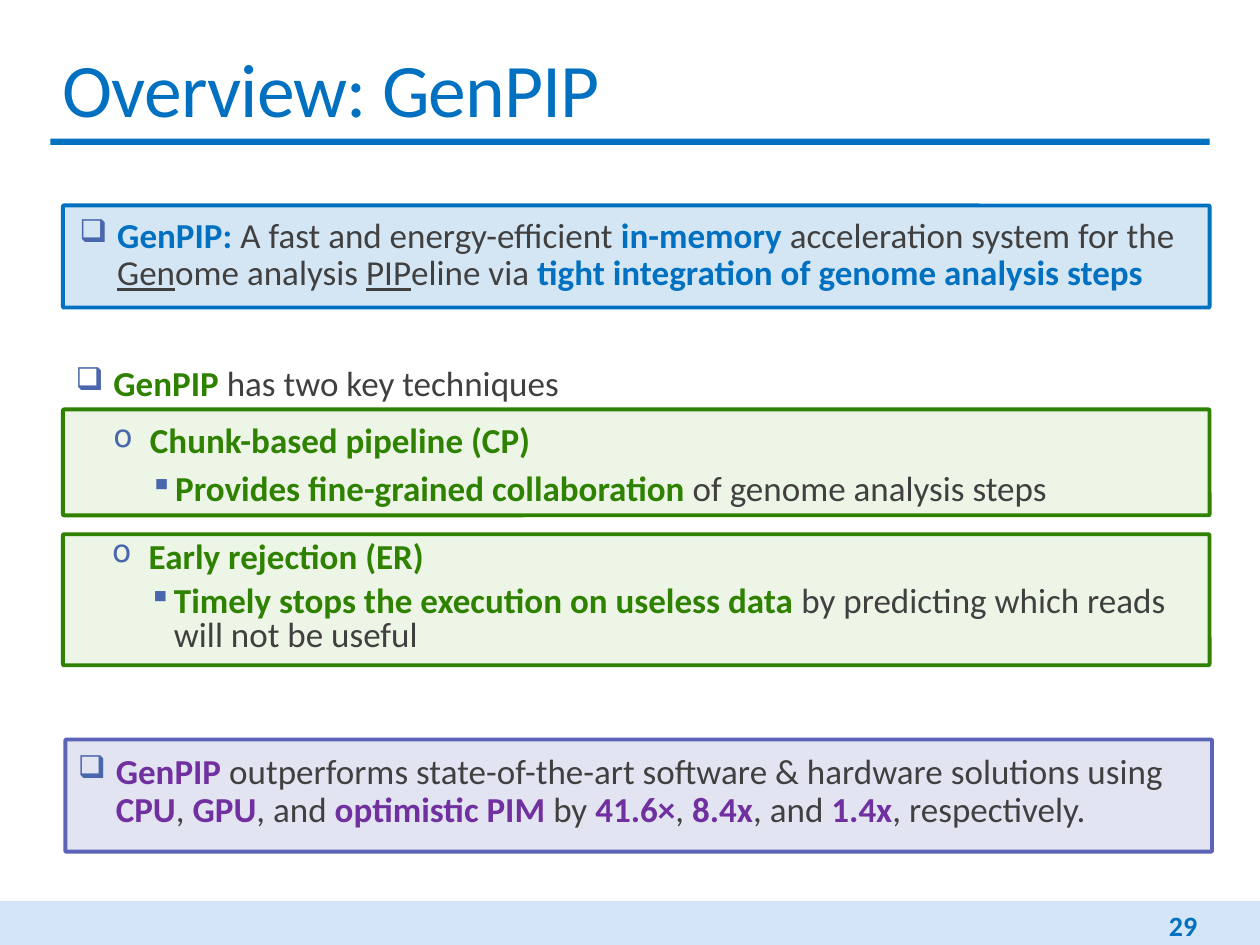
import pptx
import pptx.util
import pptx.dml.color
import pptx.enum.shapes
import pptx.enum.text
import pptx.oxml.ns
import lxml.etree

Pt = pptx.util.Pt
Color = pptx.dml.color.RGBColor
Shape = pptx.enum.shapes.MSO_SHAPE
Align = pptx.enum.text.PP_ALIGN
Anchor = pptx.enum.text.MSO_ANCHOR
qn = pptx.oxml.ns.qn

BLUE = Color(0x00, 0x70, 0xC0)
PALE = Color(0xD4, 0xE5, 0xF7)
GREEN = Color(0x2F, 0x81, 0x00)
LEAF = Color(0x8F, 0xC5, 0x6D)
INDIGO = Color(0x5C, 0x64, 0xB7)
PURPLE = Color(0x70, 0x30, 0xA0)
GRAY = Color(0x40, 0x40, 0x40)
MARK = Color(0x4A, 0x66, 0xAC)

LEVELS = [("❑", 36, -21.6, 0, 2), ("o", 56.2, -20.9, 2, 4), ("▪", 70.6, -14.4, 2, 4)]


class Deck:
    font = "Calibri"
    size = 20

    def __init__(self, slide):
        self.slide = slide

    def bar(self, left, top, width, height, color):
        shape = self.slide.shapes.add_shape(
            Shape.RECTANGLE, Pt(left), Pt(top), Pt(width), Pt(height))
        shape.shadow.inherit = False
        shape.fill.solid()
        shape.fill.fore_color.rgb = color
        shape.line.fill.background()

    def panel(self, left, top, height, color, edge):
        shape = self.slide.shapes.add_shape(
            Shape.ROUNDED_RECTANGLE, Pt(left), Pt(top), Pt(655.2), Pt(height))
        shape.adjustments[0] = 0.01
        shape.shadow.inherit = False
        shape.fill.solid()
        shape.fill.fore_color.rgb = color
        tint = shape.fill._xPr.find(".//" + qn("a:srgbClr"))
        lxml.etree.SubElement(tint, qn("a:alpha"), val="17000")
        shape.line.color.rgb = edge
        shape.line.width = Pt(2.25)

    def box(self, left, top, width, height, inset):
        shape = self.slide.shapes.add_textbox(Pt(left), Pt(top), Pt(width), Pt(height))
        frame = shape.text_frame
        frame.word_wrap = True
        frame.margin_left = frame.margin_right = Pt(inset)
        frame.margin_top = frame.margin_bottom = Pt(3.6)
        return frame

    def run(self, para, text, color=None, under=False, bold=None, size=None):
        run = para.add_run()
        run.text = text
        font = run.font
        font.name = self.font
        font.size = Pt(size or self.size)
        font.bold = color is not None if bold is None else bold
        font.color.rgb = color or GRAY
        if under:
            font.underline = True
        return run

    def label(self, left, top, width, height, text, size, bold, align):
        frame = self.box(left, top, width, height, 7.2)
        frame.vertical_anchor = Anchor.MIDDLE
        para = frame.paragraphs[0]
        para.alignment = align
        return self.run(para, text, BLUE, bold=bold, size=size)

    def bullet(self, para, level):
        char, margin, indent, before, after = LEVELS[level]
        para.level = level
        para.space_before = Pt(before)
        para.space_after = Pt(after)
        props = para._p.get_or_add_pPr()
        props.set("marL", str(Pt(margin)))
        props.set("indent", str(Pt(indent)))
        paint = lxml.etree.SubElement(props, qn("a:buClr"))
        lxml.etree.SubElement(paint, qn("a:srgbClr"), val=str(MARK))
        lxml.etree.SubElement(props, qn("a:buSzPct"), val="90000")
        lxml.etree.SubElement(props, qn("a:buChar"), char=char)

    def points(self, left, top, width, height, items, pitch=0.9):
        frame = self.box(left, top, width, height, 0)
        for index, (level, runs) in enumerate(items):
            para = frame.add_paragraph() if index else frame.paragraphs[0]
            self.bullet(para, level)
            if not index:
                para.space_before = Pt(0)
            para.line_spacing = pitch
            for run in runs:
                self.run(para, *run)


def main():
    show = pptx.Presentation()
    show.slide_width = Pt(720)
    show.slide_height = Pt(540)
    deck = Deck(show.slides.add_slide(show.slide_layouts[6]))

    deck.bar(0, 514.8, 720, 29.5, PALE)
    deck.bar(28.8, 79.2, 662.4, 3.6, BLUE)
    title = deck.label(28.8, 20.2, 671.8, 59, "Overview: GenPIP", 43.2, False, Align.LEFT)
    title.font._element.set("spc", "-50")
    deck.label(591.8, 517.7, 99.4, 21.6, "29", 16, True, Align.RIGHT)

    deck.panel(36, 117.4, 58.3, BLUE, BLUE)
    deck.panel(36, 234, 60.5, LEAF, GREEN)
    deck.panel(36, 305.3, 74.9, LEAF, GREEN)
    deck.panel(37.4, 422.6, 64.1, INDIGO, INDIGO)

    deck.points(31, 121, 662.4, 57.6, [(0, [
        ("GenPIP: ", BLUE), ("A fast and energy-efficient ",),
        ("in-memory", BLUE), (" acceleration system for the ",),
        ("Gen", None, True), ("ome analysis ",),
        ("PIP", None, True), ("eline via ",),
        ("tight integration of genome analysis steps", BLUE)])])
    deck.points(28.8, 205.9, 662.4, 28, [(0, [
        ("GenPIP ", GREEN), ("has two key techniques",)])])
    deck.points(29.5, 238.3, 662.4, 56, [
        (1, [("Chunk-based pipeline (CP)", GREEN)]),
        (2, [("Provides fine-grained collaboration ", GREEN),
             ("of genome analysis steps",)])])
    deck.points(28.8, 306.7, 650.2, 74.9, [
        (1, [("Early rejection (ER)", GREEN)]),
        (2, [("Timely stops the execution on useless data", GREEN),
             (" by predicting which reads will not be useful",)])], 0.8)
    deck.points(30.2, 427.7, 662.4, 62.6, [(0, [
        ("GenPIP", PURPLE),
        (" outperforms state-of-the-art software & hardware solutions using ",),
        ("CPU", PURPLE), (", ",), ("GPU", PURPLE), (", and ",),
        ("optimistic PIM ", PURPLE), ("by ",),
        ("41.6×", PURPLE), (", ",), ("8.4x", PURPLE), (", and ",),
        ("1.4x", PURPLE), (", respectively.",)])])

    show.save("out.pptx")


if __name__ == "__main__":
    main()
